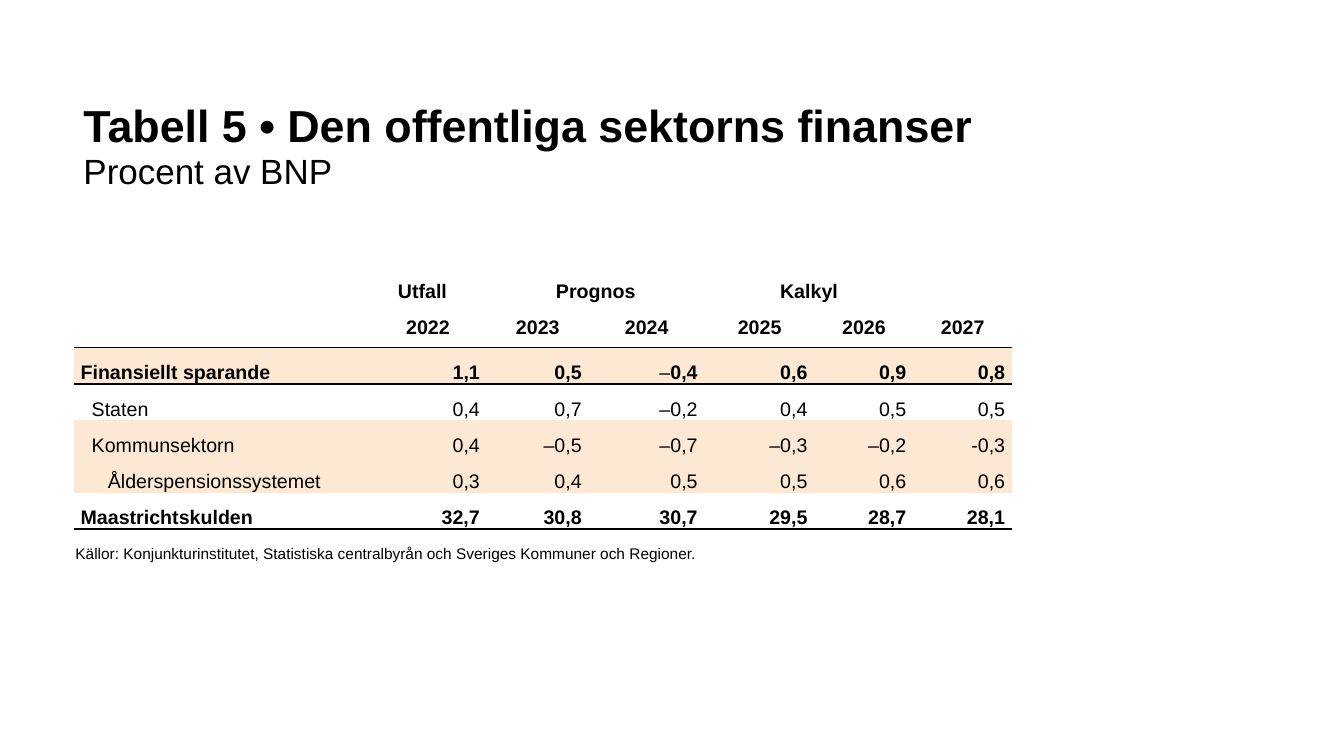
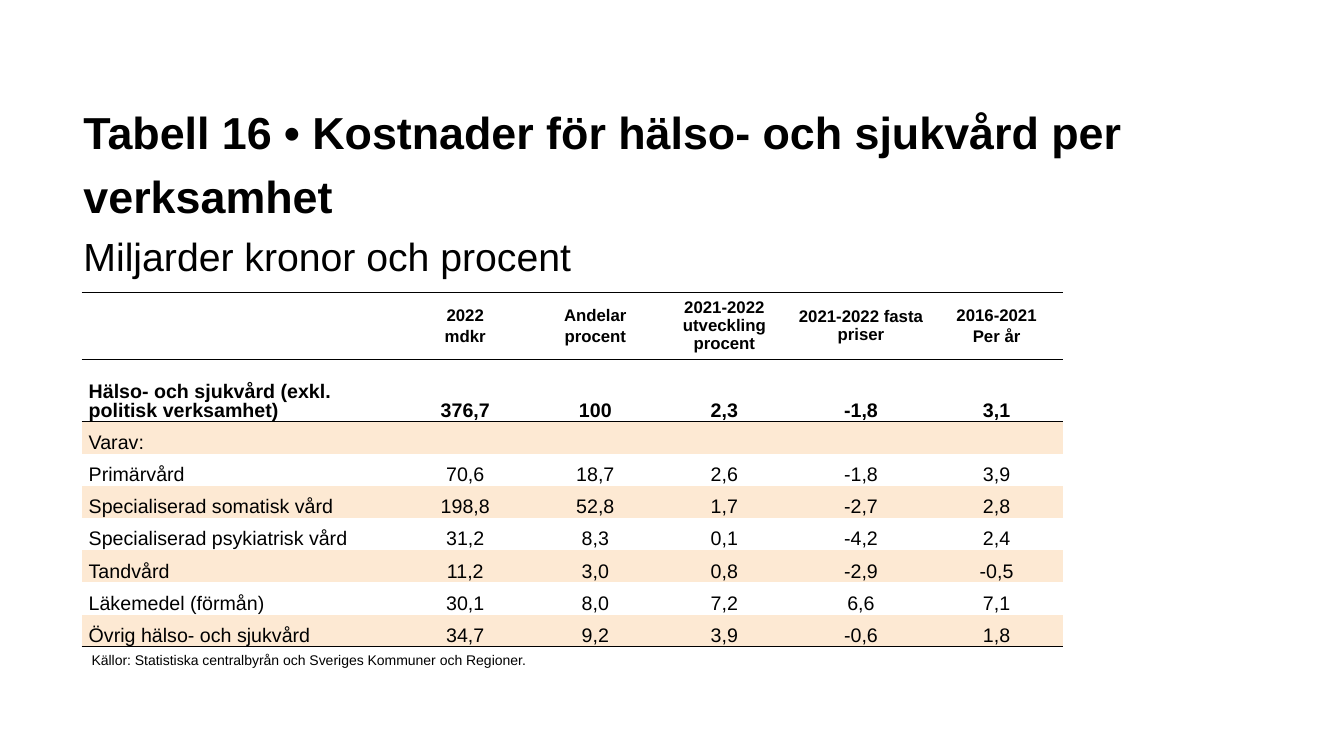
import dataclasses

import pptx
import pptx.dml.color
import pptx.enum.text
import pptx.oxml
import pptx.oxml.ns
import pptx.util
from pptx.util import Inches

COLORS = {"text": "000000", "band": "FDE9D3", "plain": "FFFFFF", "rule": "000000"}
FONT = "Arial"
NO_STYLE = "{2D5ABB26-0587-4C30-8999-92F81FD0307C}"
CELL_PAD = 0.07
ALIGN = pptx.enum.text.PP_ALIGN
ANCHOR = pptx.enum.text.MSO_ANCHOR


@dataclasses.dataclass(frozen=True)
class Row:
    cells: tuple[str, ...]
    height: float
    size: float = 14
    header: bool = False
    bold: bool = False
    banded: bool = False
    indent: float = 0
    spans: tuple[int, ...] = ()  # columns that also cover the next one
    extra_right: tuple[int, ...] = ()  # columns nudged left by right padding
    rule_above: bool = False
    rule_below: bool = False


@dataclasses.dataclass(frozen=True)
class Heading:
    text: str
    unit: str
    unit_size: float
    top: float
    line_spacing: float


@dataclasses.dataclass(frozen=True)
class Source:
    text: str
    size: float
    left: float
    top: float


@dataclasses.dataclass(frozen=True)
class TableSlide:
    heading: Heading
    left: float
    top: float
    columns: tuple[float, ...]
    value_align: ALIGN
    rows: tuple[Row, ...]
    source: Source


def color(name: str) -> pptx.dml.color.RGBColor:
    return pptx.dml.color.RGBColor.from_string(COLORS[name])


def add_run(paragraph, text: str, size: float, bold: bool = False) -> None:
    run = paragraph.add_run()
    run.text = text
    run.font.name = FONT
    run.font.size = pptx.util.Pt(size)
    run.font.bold = bold
    run.font.color.rgb = color("text")


def add_text_frame(slide, left: float, top: float, width: float, height: float):
    frame = slide.shapes.add_textbox(
        Inches(left), Inches(top), Inches(width), Inches(height)).text_frame
    frame.word_wrap = True
    return frame


def add_heading(slide, heading: Heading) -> None:
    frame = add_text_frame(slide, 0.73, heading.top, 12, 1.35)
    paragraph = frame.paragraphs[0]
    paragraph.line_spacing = heading.line_spacing
    add_run(paragraph, heading.text, 32, bold=True)
    paragraph.add_line_break()
    add_run(paragraph, heading.unit, heading.unit_size)


def add_source(slide, source: Source) -> None:
    frame = add_text_frame(slide, source.left, source.top, 6.67, 0.27)
    add_run(frame.paragraphs[0], source.text, source.size)


def add_rule(cell, side: str) -> None:
    rule = pptx.oxml.parse_xml(
        f'<a:{side} {pptx.oxml.ns.nsdecls("a")} w="12700"><a:solidFill>'
        f'<a:srgbClr val="{COLORS["rule"]}"/></a:solidFill></a:{side}>')
    cell._tc.get_or_add_tcPr().insert(0, rule)


def fill_cell(cell, row: Row, column: int, value_align: ALIGN) -> None:
    cell.margin_left = cell.margin_right = Inches(CELL_PAD)
    cell.margin_top = cell.margin_bottom = 0
    if column in row.extra_right:
        cell.margin_right = Inches(CELL_PAD + 0.11)
    cell.vertical_anchor = ANCHOR.MIDDLE if row.header else ANCHOR.BOTTOM
    cell.fill.solid()
    cell.fill.fore_color.rgb = color("band" if row.banded else "plain")

    # Text, with a light minus sign in bold rows
    for index, line in enumerate(row.cells[column].split("\n")):
        paragraph = (cell.text_frame.add_paragraph() if index
                     else cell.text_frame.paragraphs[0])
        paragraph.line_spacing = pptx.util.Pt(13)
        paragraph.space_before = pptx.util.Pt(1 if index else 0)
        paragraph.space_after = pptx.util.Pt(1)
        if row.header:
            paragraph.alignment = ALIGN.CENTER
        elif column:
            paragraph.alignment = value_align
        elif row.indent:
            paragraph._p.get_or_add_pPr().set("marL", str(Inches(row.indent)))
        if line.startswith("–") and row.bold:
            add_run(paragraph, "–", row.size)
            line = line[1:]
        if line:
            add_run(paragraph, line, row.size, row.bold)

    # Rules go in reverse, each in front of the one before
    if row.rule_below:
        add_rule(cell, "lnB")
    if row.rule_above:
        add_rule(cell, "lnT")


def add_figures(slide, content: TableSlide) -> None:
    frame = slide.shapes.add_table(
        len(content.rows), len(content.columns),
        Inches(content.left), Inches(content.top),
        Inches(sum(content.columns)), Inches(sum(r.height for r in content.rows)))
    figures = frame.table
    figures.first_row = figures.horz_banding = False
    figures._tbl.tblPr.find(pptx.oxml.ns.qn("a:tableStyleId")).text = NO_STYLE
    for column, width in enumerate(content.columns):
        figures.columns[column].width = Inches(width)
    for index, row in enumerate(content.rows):
        figures.rows[index].height = Inches(row.height)
        for column in range(len(content.columns)):
            fill_cell(figures.cell(index, column), row, column, content.value_align)
        for column in row.spans:
            figures.cell(index, column).merge(figures.cell(index, column + 1))


def data_row(label: str, values: str, height: float, **style) -> Row:
    return Row((label, *values.split()), height, **style)


FINANCES = TableSlide(
    heading=Heading("Tabell 5 • Den offentliga sektorns finanser", "Procent av BNP",
                    25, 0.96, 0.95),
    left=0.73, top=2.73,
    columns=(2.93, 1.17, 1.01, 1.15, 1.09, 0.98, 0.98),
    value_align=ALIGN.RIGHT,
    rows=(
        Row(("", "Utfall", "Prognos", "", "Kalkyl", "", ""), 0.36, header=True,
            bold=True, spans=(2, 4), extra_right=(1,)),
        data_row("", "2022 2023 2024 2025 2026 2027", 0.36, header=True, bold=True,
                 rule_below=True),
        data_row("Finansiellt sparande", "1,1 0,5 –0,4 0,6 0,9 0,8", 0.36, bold=True,
                 banded=True, rule_above=True),
        data_row("Staten", "0,4 0,7 –0,2 0,4 0,5 0,5", 0.36, indent=0.11),
        data_row("Kommunsektorn", "0,4 –0,5 –0,7 –0,3 –0,2 -0,3", 0.36, banded=True,
                 indent=0.11),
        data_row("Ålderspensionssystemet", "0,3 0,4 0,5 0,5 0,6 0,6", 0.36, banded=True,
                 indent=0.27),
        data_row("Maastrichtskulden", "32,7 30,8 30,7 29,5 28,7 28,1", 0.36, bold=True,
                 rule_below=True),
    ),
    source=Source("Källor: Konjunkturinstitutet, Statistiska centralbyrån och "
                  "Sveriges Kommuner och Regioner.", 11, 0.65, 5.35),
)

CARE_COSTS = TableSlide(
    heading=Heading("Tabell 16 • Kostnader för hälso- och sjukvård per verksamhet",
                    "Miljarder kronor och procent", 28, 0.88, 1.2),
    left=0.81, top=2.9,
    columns=(3.13, 1.35, 1.23, 1.33, 1.38, 1.31),
    value_align=ALIGN.CENTER,
    rows=(
        Row(("", "2022\nmdkr", "Andelar\nprocent", "2021-2022 utveckling procent",
             "2021-2022 fasta priser", "2016-2021\nPer år"), 0.67, size=12, header=True,
            bold=True, rule_above=True, rule_below=True),
        data_row("Hälso- och sjukvård (exkl. politisk verksamhet)",
                 "376,7 100 2,3 -1,8 3,1", 0.61, bold=True, rule_above=True),
        Row(("Varav:", "", "", "", "", ""), 0.32, banded=True),
        data_row("Primärvård", "70,6 18,7 2,6 -1,8 3,9", 0.32),
        data_row("Specialiserad somatisk vård", "198,8 52,8 1,7 -2,7 2,8", 0.32,
                 banded=True),
        data_row("Specialiserad psykiatrisk vård", "31,2 8,3 0,1 -4,2 2,4", 0.32),
        data_row("Tandvård", "11,2 3,0 0,8 -2,9 -0,5", 0.32, banded=True),
        data_row("Läkemedel (förmån)", "30,1 8,0 7,2 6,6 7,1", 0.32),
        data_row("Övrig hälso- och sjukvård", "34,7 9,2 3,9 -0,6 1,8", 0.32,
                 banded=True, rule_below=True),
    ),
    source=Source("Källor: Statistiska centralbyrån och Sveriges Kommuner och Regioner.",
                  10, 0.81, 6.41),
)


def main() -> None:
    deck = pptx.Presentation()
    deck.slide_width, deck.slide_height = Inches(13.33), Inches(7.5)
    for content in (FINANCES, CARE_COSTS):
        slide = deck.slides.add_slide(deck.slide_layouts[6])
        add_heading(slide, content.heading)
        add_figures(slide, content)
        add_source(slide, content.source)
    deck.save("out.pptx")


if __name__ == "__main__":
    main()
